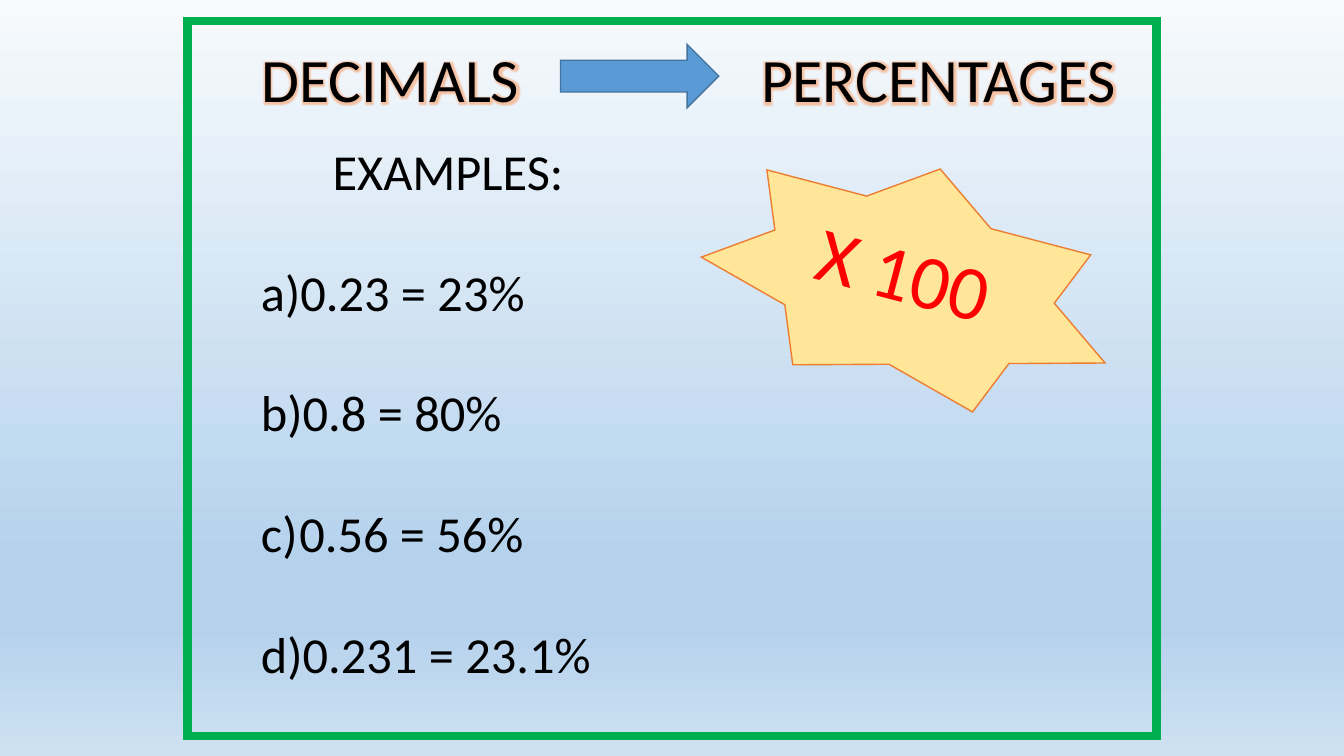
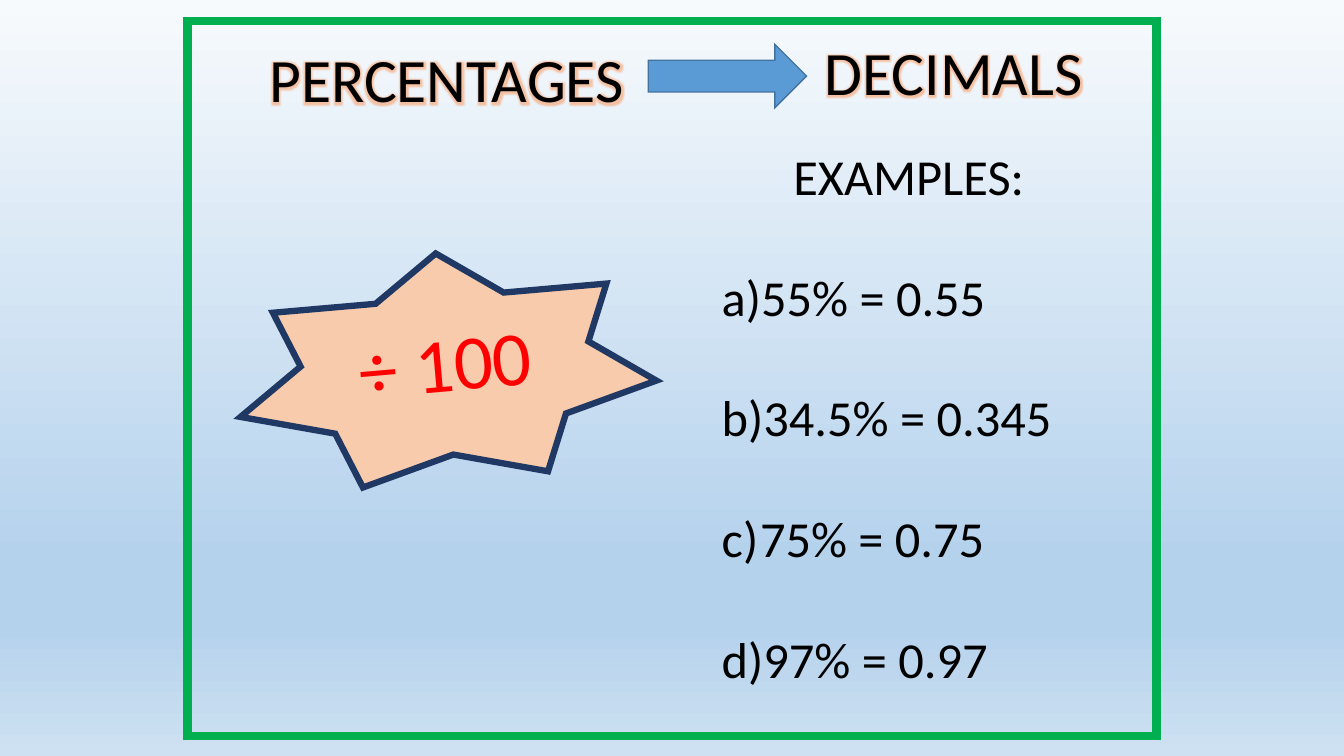
from dataclasses import dataclass

from lxml.etree import SubElement
from pptx import Presentation
from pptx.dml.color import RGBColor
from pptx.enum.shapes import MSO_SHAPE
from pptx.enum.text import MSO_ANCHOR, MSO_AUTO_SIZE, PP_ALIGN
from pptx.oxml.ns import qn
from pptx.util import Inches, Pt

FONT = "Calibri"
BLACK = RGBColor(0x00, 0x00, 0x00)
RED = RGBColor(0xFF, 0x00, 0x00)
GREEN = RGBColor(0x00, 0xB0, 0x50)
BLUE = RGBColor(0x5B, 0x9B, 0xD5)
DARK_BLUE = RGBColor(0x43, 0x73, 0x9E)
NAVY = RGBColor(0x20, 0x38, 0x64)
YELLOW = RGBColor(0xFF, 0xE6, 0x99)
PEACH = RGBColor(0xF8, 0xCB, 0xAD)
ORANGE = RGBColor(0xED, 0x7D, 0x31)
GLOW = RGBColor(0xFF, 0x73, 0x1F)
SKY = [
    (0, RGBColor(0xF7, 0xFA, 0xFD)),
    (74, RGBColor(0xB5, 0xD2, 0xEC)),
    (83, RGBColor(0xB5, 0xD2, 0xEC)),
    (100, RGBColor(0xCE, 0xE1, 0xF2)),
]


@dataclass
class Heading:
    text: str
    left: float
    top: float
    width: float


@dataclass
class Star:
    text: str
    left: float
    top: float
    rotation: float
    fill: RGBColor
    line: RGBColor
    weight: float


@dataclass
class Conversion:
    source: Heading
    target: Heading
    arrow_left: float
    star: Star
    examples_left: float
    examples_top: float
    examples: list[str]


CONVERSIONS = [
    Conversion(
        Heading("DECIMALS", 2.49, 0.36, 3.31),
        Heading("PERCENTAGES", 7.45, 0.36, 3.76),
        5.56,
        Star("X 100 ", 6.97, 1.64, 14.7, YELLOW, ORANGE, 1),
        2.49, 1.34,
        ["0.23 = 23%", "0.8 = 80%", "0.56 = 56%", "0.231 = 23.1%"],
    ),
    Conversion(
        Heading("PERCENTAGES", 2.57, 0.36, 3.76),
        Heading("DECIMALS", 8.08, 0.29, 3.31),
        6.43,
        Star(" ÷ 100 ", 2.35, 2.51, 355, PEACH, NAVY, 4.5),
        7.06, 1.39,
        ["55% = 0.55", "34.5% = 0.345", "75% = 0.75", "97% = 0.97"],
    ),
]


def paint_background(master) -> None:
    fill = master.background.fill
    fill.gradient()
    fill.gradient_angle = 270
    stops = master.element.find(".//" + qn("p:bg")).find(".//" + qn("a:gsLst"))
    for gs in list(stops):
        stops.remove(gs)
    for pos, color in SKY:
        gs = SubElement(stops, qn("a:gs"), pos=str(pos * 1000))
        SubElement(gs, qn("a:srgbClr"), val=str(color))


def add_run(p, text: str, size: float, color: RGBColor, glow: bool = False) -> None:
    r = p.add_run()
    r.text = text
    r.font.size = Pt(size)
    r.font.color.rgb = color
    if glow:
        effects = SubElement(r.font._element, qn("a:effectLst"))
        halo = SubElement(effects, qn("a:glow"), rad=str(Pt(5)))
        clr = SubElement(halo, qn("a:srgbClr"), val=str(GLOW))
        SubElement(clr, qn("a:alpha"), val="40000")
    r.font.name = FONT


def write_heading(sp, heading: Heading) -> None:
    sp.left, sp.top = Inches(heading.left), Inches(heading.top)
    sp.width, sp.height = Inches(heading.width), Inches(0.84)
    tf = sp.text_frame
    tf.word_wrap = True
    tf.auto_size = MSO_AUTO_SIZE.NONE
    tf.vertical_anchor = MSO_ANCHOR.TOP
    p = tf.paragraphs[0]
    p.alignment = PP_ALIGN.LEFT
    add_run(p, heading.text, 44, BLACK, glow=True)


def add_box(s, left: float, top: float, width: float, height: float):
    return s.shapes.add_textbox(Inches(left), Inches(top), Inches(width), Inches(height))


def add_figure(s, kind: MSO_SHAPE, left: float, top: float, width: float, height: float,
               fill: RGBColor | None, line: RGBColor, weight: float):
    sp = s.shapes.add_shape(kind, Inches(left), Inches(top), Inches(width), Inches(height))
    sp.shadow.inherit = False
    if fill is None:
        sp.fill.background()
    else:
        sp.fill.solid()
        sp.fill.fore_color.rgb = fill
    sp.line.color.rgb = line
    sp.line.width = Pt(weight)
    SubElement(sp.line._get_or_add_ln(), qn("a:miter"), lim="800000")
    return sp


def add_star(s, star: Star) -> None:
    sp = add_figure(s, MSO_SHAPE.STAR_7_POINT, star.left, star.top, 4.14, 2.25,
                    star.fill, star.line, star.weight)
    sp.rotation = star.rotation
    tf = sp.text_frame
    tf.vertical_anchor = MSO_ANCHOR.MIDDLE
    p = tf.paragraphs[0]
    p.alignment = PP_ALIGN.CENTER
    add_run(p, star.text, 55, RED)


def add_examples(s, left: float, top: float, examples: list[str]) -> None:
    tf = add_box(s, left, top, 4.02, 5.55).text_frame
    tf.word_wrap = True
    p = tf.paragraphs[0]
    p.alignment = PP_ALIGN.CENTER
    add_run(p, "EXAMPLES: ", 36, BLACK)
    for example in examples:
        p = tf.add_paragraph()
        p.space_before = Pt(43)
        pPr = p._p.get_or_add_pPr()
        pPr.set("marL", str(Inches(0.38)))
        pPr.set("indent", str(-Inches(0.38)))
        SubElement(pPr, qn("a:buAutoNum"), type="alphaLcParenR")
        add_run(p, example, 36, BLACK)


def add_conversion(prs, conv: Conversion) -> None:
    s = prs.slides.add_slide(prs.slide_layouts.get_by_name("Title Only"))
    write_heading(s.shapes.title, conv.source)
    add_figure(s, MSO_SHAPE.RECTANGLE, 1.86, 0.21, 9.61, 7.09, None, GREEN, 6)
    add_figure(s, MSO_SHAPE.RIGHT_ARROW, conv.arrow_left, 0.44, 1.57, 0.63, BLUE, DARK_BLUE, 1)
    target = conv.target
    write_heading(add_box(s, target.left, target.top, target.width, 0.84), target)
    add_star(s, conv.star)
    add_examples(s, conv.examples_left, conv.examples_top, conv.examples)


def main() -> None:
    prs = Presentation()
    prs.slide_width, prs.slide_height = Inches(13.33), Inches(7.5)
    paint_background(prs.slide_master)
    for conv in CONVERSIONS:
        add_conversion(prs, conv)
    prs.save("out.pptx")


if __name__ == "__main__":
    main()
